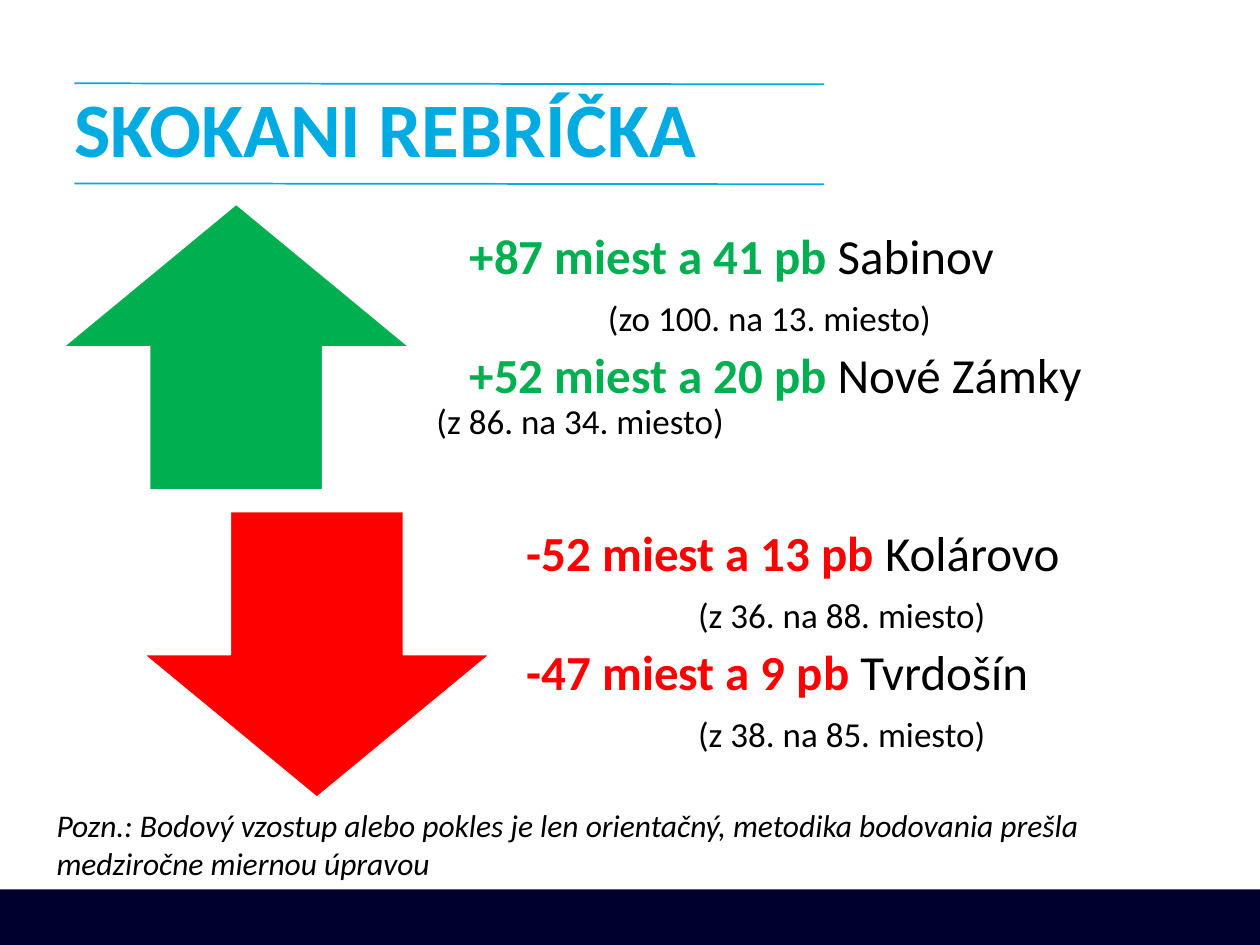
from dataclasses import dataclass

from lxml.etree import SubElement
from pptx import Presentation
from pptx.dml.color import RGBColor
from pptx.enum.shapes import MSO_CONNECTOR, MSO_SHAPE
from pptx.enum.text import MSO_ANCHOR, MSO_AUTO_SIZE, PP_ALIGN
from pptx.oxml.ns import qn
from pptx.util import Pt


@dataclass(frozen=True)
class Theme:
    font: str = "Calibri"
    accent: str = "00ABE2"
    bar: str = "00002E"
    up: str = "00B050"
    down: str = "FF0000"
    text: str = "000000"
    white: str = "FFFFFF"
    title_size: int = 44
    main_size: int = 28
    detail_size: int = 20
    note_size: int = 18
    line_spacing: float = 0.9
    space_ratio: float = 0.33
    inset: float = 15.84
    detail_indent: float = 98


class SlideBuilder:
    def __init__(self, slide, theme):
        self.s = slide
        self.t = theme

    def run(self, p, text, size, color, bold=False, italic=False):
        r = p.add_run()
        r.text = text
        r.font.name = self.t.font
        r.font.size = Pt(size)
        r.font.bold = bold
        r.font.italic = italic
        r.font.color.rgb = RGBColor.from_string(color)

    def frame(self, sp, anchor, insets):
        tf = sp.text_frame
        tf.word_wrap = True
        tf.auto_size = MSO_AUTO_SIZE.NONE
        tf.vertical_anchor = anchor
        tf.margin_left, tf.margin_top, tf.margin_right, tf.margin_bottom = map(Pt, insets)
        return tf

    def title(self, text, box):
        sp = self.s.shapes.title
        sp.left, sp.top, sp.width, sp.height = map(Pt, box)
        p = self.frame(sp, MSO_ANCHOR.MIDDLE, (0, 0, 0, 0)).paragraphs[0]
        p.alignment = PP_ALIGN.LEFT
        p.line_spacing = self.t.line_spacing
        self.run(p, text, self.t.title_size, self.t.accent, bold=True)

    def shape(self, kind, box, fill, outline=None):
        sp = self.s.shapes.add_shape(kind, *map(Pt, box))
        sp.shadow.inherit = False
        sp.fill.solid()
        sp.fill.fore_color.rgb = RGBColor.from_string(fill)
        if outline:
            sp.line.color.rgb = RGBColor.from_string(outline)
            sp.line.width = Pt(1)
        else:
            sp.line.fill.background()

    def rule(self, x1, y1, x2, y2):
        line = self.s.shapes.add_connector(MSO_CONNECTOR.STRAIGHT, *map(Pt, (x1, y1, x2, y2)))
        line.line.color.rgb = RGBColor.from_string(self.t.accent)
        line.line.width = Pt(1)
        SubElement(line._element.spPr, qn("a:effectLst"))

    def paragraph(self, tf, first, size, left=0, indent=0):
        p = tf.paragraphs[0] if first else tf.add_paragraph()
        p.line_spacing = self.t.line_spacing
        p.space_after = Pt(size * self.t.space_ratio)
        pPr = p._p.get_or_add_pPr()
        pPr.set("marL", str(Pt(left)))
        pPr.set("indent", str(Pt(indent)))
        return p

    def movers(self, box, color, entries, indent=0):
        """Each entry: change, town, rank detail, detail on its own paragraph."""
        t = self.t
        sp = self.s.shapes.add_textbox(*map(Pt, box))
        tf = self.frame(sp, MSO_ANCHOR.MIDDLE, (t.inset, 0, t.inset, t.inset))
        for i, (change, town, detail, own_paragraph) in enumerate(entries):
            p = self.paragraph(tf, i == 0, t.main_size, indent=indent)
            self.run(p, change + " ", t.main_size, color, bold=True)
            self.run(p, town, t.main_size, t.text)
            if own_paragraph:
                p = self.paragraph(tf, False, t.detail_size, left=t.detail_indent)
            else:
                p.add_line_break()
            self.run(p, detail, t.detail_size, t.text)

    def note(self, text, box):
        sp = self.s.shapes.add_textbox(*map(Pt, box))
        tf = self.frame(sp, MSO_ANCHOR.TOP, (7.2, 3.6, 7.2, 3.6))
        self.run(tf.paragraphs[0], text, self.t.note_size, self.t.text, italic=True)


def main():
    prs = Presentation()
    prs.slide_width, prs.slide_height = Pt(720), Pt(540)
    theme = Theme()
    b = SlideBuilder(prs.slides.add_slide(prs.slide_layouts[5]), theme)

    # Footer bar and title between two rules
    b.shape(MSO_SHAPE.RECTANGLE, (0, 508.3, 720, 31.7), theme.bar)
    b.rule(42.5, 47.6, 470.9, 48.2)
    b.rule(42.5, 104.8, 470.9, 105.3)
    b.title("SKOKANI REBRÍČKA", (42.5, 44.6, 499, 62.6))

    # Towns that climbed
    b.shape(MSO_SHAPE.UP_ARROW, (36, 116.6, 198, 163.4), theme.up, theme.white)
    b.movers((233.6, 144.7, 408.2, 111.6), theme.up, [
        ("+87 miest a 41 pb", "Sabinov", "(zo 100. na 13. miesto)", True),
        ("+52 miest a 20 pb", "Nové Zámky", "(z 86. na 34. miesto)", False),
    ], indent=19)

    # Towns that fell
    b.shape(MSO_SHAPE.DOWN_ARROW, (82.1, 292.3, 198, 163.4), theme.down, theme.white)
    b.movers((285.1, 292.3, 362.9, 164.9), theme.down, [
        ("-52 miest a 13 pb", "Kolárovo", "(z 36. na 88. miesto)", True),
        ("-47 miest a 9 pb", "Tvrdošín", "(z 38. na 85. miesto)", True),
    ])

    # Method note
    b.note("Pozn.: Bodový vzostup alebo pokles je len orientačný, metodika bodovania "
           "prešla medziročne miernou úpravou", (25.2, 457.2, 663.1, 51.1))

    prs.save("out.pptx")


if __name__ == "__main__":
    main()
